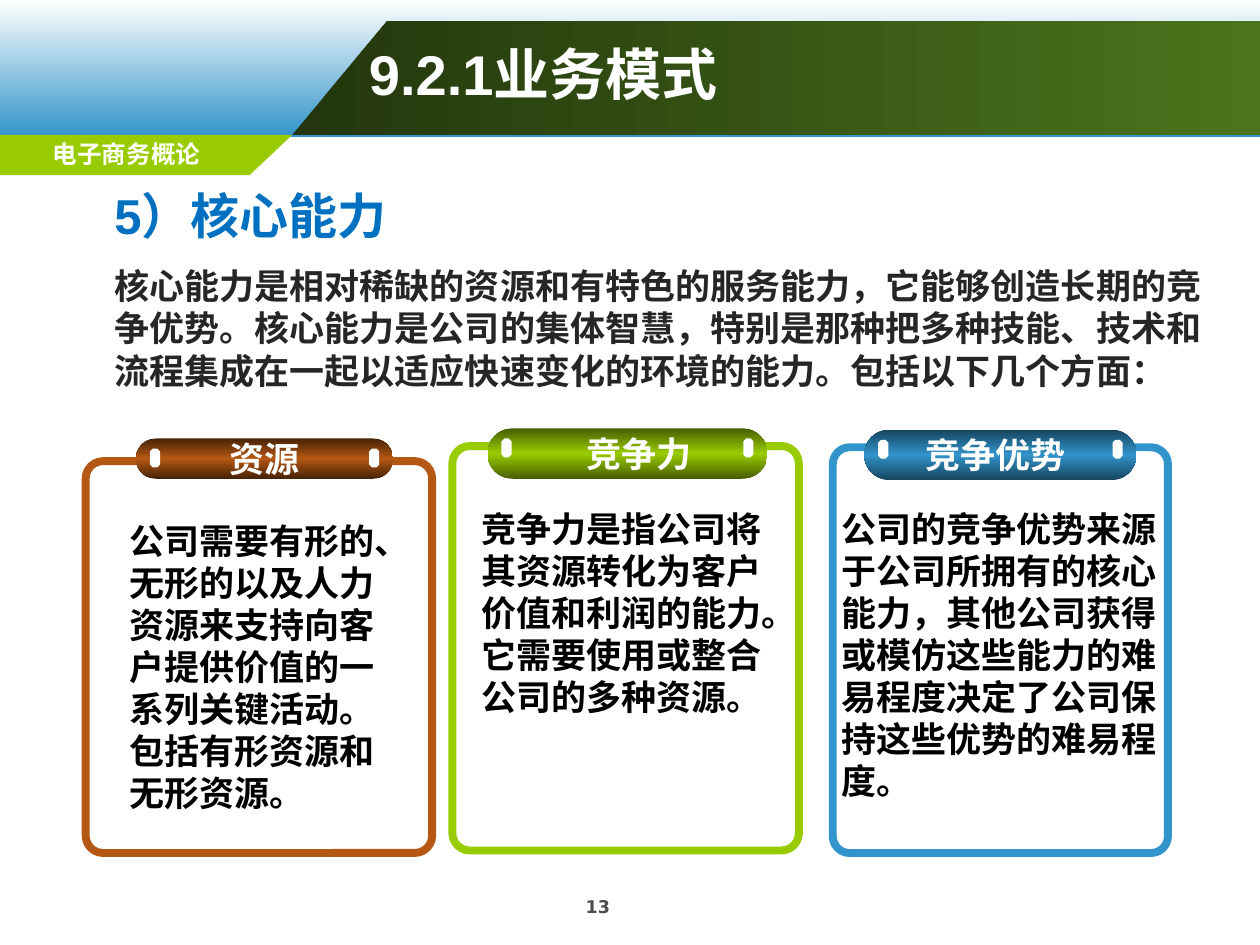
from collections import namedtuple

from lxml.etree import SubElement
from pptx import Presentation
from pptx.dml.color import RGBColor
from pptx.enum.shapes import MSO_SHAPE as SHAPE
from pptx.enum.text import MSO_ANCHOR as ANCHOR, PP_ALIGN as ALIGN
from pptx.oxml.ns import qn
from pptx.util import Inches, Pt

# Grid of 100 columns by 75 rows
COLS, ROWS = 100, 75
CELL = Inches(0.1)

WHITE = RGBColor(0xFF, 0xFF, 0xFF)
BLACK = RGBColor(0x00, 0x00, 0x00)
INK = RGBColor(0x26, 0x26, 0x26)
GRAY = RGBColor(0x4D, 0x4D, 0x4D)
HEADING_BLUE = RGBColor(0x00, 0x70, 0xC0)
FOREST = RGBColor(0x23, 0x36, 0x0D)
MOSS = RGBColor(0x4B, 0x75, 0x1D)
LIME = RGBColor(0x99, 0xCC, 0x00)
DARK_LIME = RGBColor(0x47, 0x5E, 0x00)
RUST = RGBColor(0xB5, 0x58, 0x13)
DARK_RUST = RGBColor(0x46, 0x22, 0x07)
SKY = RGBColor(0x31, 0x94, 0xCB)
DARK_SKY = RGBColor(0x17, 0x44, 0x5E)


class Box(namedtuple("Box", "x y w h")):
    def inner(self, x, y, w, h):
        """A box placed from this one's top left corner."""
        return Box(self.x + x, self.y + y, w, h)

    def emu(self):
        return [round(value * CELL) for value in self]


Card = namedtuple("Card", "box pill label_shift body_box color dark label body")

CARDS = [
    Card(Box(6.8, 36.6, 27.5, 31.1), (4, -1.8, 20.4, 3.2), 0,
         (2.5, 4.1, 23.3, 29.2), RUST, DARK_RUST, "资源",
         "公司需要有形的、无形的以及人力资源来支持向客户提供价值的一系列关键活动。"
         "包括有形资源和无形资源。"),
    Card(Box(35.9, 35.4, 27.5, 32.1), (2.8, -1.4, 22.2, 4), 0.9,
         (1.3, 4.4, 25.6, 21.2), LIME, DARK_LIME, "竞争力",
         "竞争力是指公司将其资源转化为客户价值和利润的能力。"
         "它需要使用或整合公司的多种资源。"),
    Card(Box(66.1, 35.5, 26.6, 32.2), (2.5, -1.4, 21.6, 4), -0.4,
         (-0.3, 4.3, 27.4, 24.6), SKY, DARK_SKY, "竞争优势",
         "公司的竞争优势来源于公司所拥有的核心能力，其他公司获得或模仿这些能力的"
         "难易程度决定了公司保持这些优势的难易程度。"),
]


def paint(shape, colors, angle=0):
    """Fill with one colour, or with evenly spaced gradient stops."""
    shape.shadow.inherit = False
    shape.line.fill.background()
    if len(colors) == 1:
        shape.fill.solid()
        shape.fill.fore_color.rgb = colors[0]
        return
    shape.fill.gradient()
    shape.fill.gradient_angle = -angle % 360
    stops = shape._element.spPr.find(qn("a:gradFill")).find(qn("a:gsLst"))
    for stop in list(stops):
        stops.remove(stop)
    for i, color in enumerate(colors):
        position = str(100000 * i // (len(colors) - 1))
        stop = SubElement(stops, qn("a:gs"), pos=position)
        SubElement(stop, qn("a:srgbClr"), val=str(color))


def add_preset(slide, kind, box, colors, angle=0, corner=None):
    shape = slide.shapes.add_shape(kind, *box.emu())
    if corner is not None:
        shape.adjustments[0] = corner
    paint(shape, colors, angle)
    return shape


def add_outline(slide, points, colors):
    corners = [(round(x * CELL), round(y * CELL)) for x, y in points]
    builder = slide.shapes.build_freeform(*corners[0])
    builder.add_line_segments(corners[1:], close=True)
    paint(builder.convert_to_shape(), colors)


def add_run(paragraph, text, size, color, font="Arial"):
    run = paragraph.add_run()
    run.text = text
    run.font.size = Pt(size)
    run.font.name = font
    run.font.bold = True
    run.font.color.rgb = color


def add_text(slide, box, text, size, color, font="Arial",
             align=ALIGN.LEFT, anchor=ANCHOR.TOP):
    frame = slide.shapes.add_textbox(*box.emu()).text_frame
    frame.word_wrap = True
    frame.vertical_anchor = anchor
    paragraph = frame.paragraphs[0]
    paragraph.alignment = align
    add_run(paragraph, text, size, color, font)
    return frame


def add_header(slide, box):
    # Sky backdrop, dark title band and lime course tab
    add_preset(slide, SHAPE.RECTANGLE, box, [WHITE, SKY], angle=90)
    top, base, tab_end, notch = box.y + 1.7, box.y + 10.7, box.y + 13.9, box.x + 23.2
    right = box.x + box.w
    add_outline(slide, [(notch, base), (right, base), (right, top),
                        (box.x + 30.7, top)], [FOREST, MOSS])
    add_outline(slide, [(box.x, base), (notch, base), (box.x + 19.8, tab_end),
                        (box.x, tab_end)], [LIME])
    add_text(slide, box.inner(0.4, 10.5, 19.3, 3.1), "电子商务概论", 14, WHITE,
             "DejaVu Sans", ALIGN.CENTER)
    add_text(slide, box.inner(28.3, 2.5, 68.9, 6.6), "9.2.1业务模式", 32, WHITE,
             anchor=ANCHOR.MIDDLE)


def add_intro(slide, box):
    frame = add_text(slide, box, "5）核心能力", 28, HEADING_BLUE)
    frame.paragraphs[0].space_after = Pt(12)
    add_run(frame.add_paragraph(),
            "核心能力是相对稀缺的资源和有特色的服务能力，它能够创造长期的竞争优势。"
            "核心能力是公司的集体智慧，特别是那种把多种技能、技术和流程集成在一起以"
            "适应快速变化的环境的能力。包括以下几个方面：", 20, INK)


def add_card(slide, card):
    # Frame
    frame = slide.shapes.add_shape(SHAPE.ROUNDED_RECTANGLE, *card.box.emu())
    frame.adjustments[0] = 0.05
    frame.shadow.inherit = False
    frame.fill.background()
    frame.line.color.rgb = card.color
    frame.line.width = Pt(4.5)
    # Pill with a stud near each end
    pill = card.box.inner(*card.pill)
    add_preset(slide, SHAPE.ROUNDED_RECTANGLE, pill,
               [card.dark, card.color, card.dark], angle=90, corner=0.5)
    inset, stud_w, stud_h = 1.1, 0.8, 1.5
    for x in (inset, pill.w - inset - stud_w):
        add_preset(slide, SHAPE.OCTAGON, pill.inner(x, 0.8, stud_w, stud_h),
                   [WHITE], corner=0.29)
    # Label and body
    add_text(slide, pill.inner(card.label_shift, 0, pill.w, pill.h), card.label,
             20, WHITE, align=ALIGN.CENTER, anchor=ANCHOR.MIDDLE)
    add_text(slide, card.box.inner(*card.body_box), card.body, 20, BLACK)


def main():
    deck = Presentation()
    deck.slide_width, deck.slide_height = COLS * CELL, ROWS * CELL
    slide = deck.slides.add_slide(deck.slide_layouts[6])
    add_header(slide, Box(0, 0, COLS, 10.9))
    add_intro(slide, Box(8.1, 14.2, 89.2, 17.5))
    for card in CARDS:
        add_card(slide, card)
    # Page number
    add_text(slide, Box(35.8, 70.6, 23.3, 3.3), "13", 10, GRAY,
             "DejaVu Sans", ALIGN.CENTER)
    deck.save("out.pptx")


if __name__ == "__main__":
    main()
